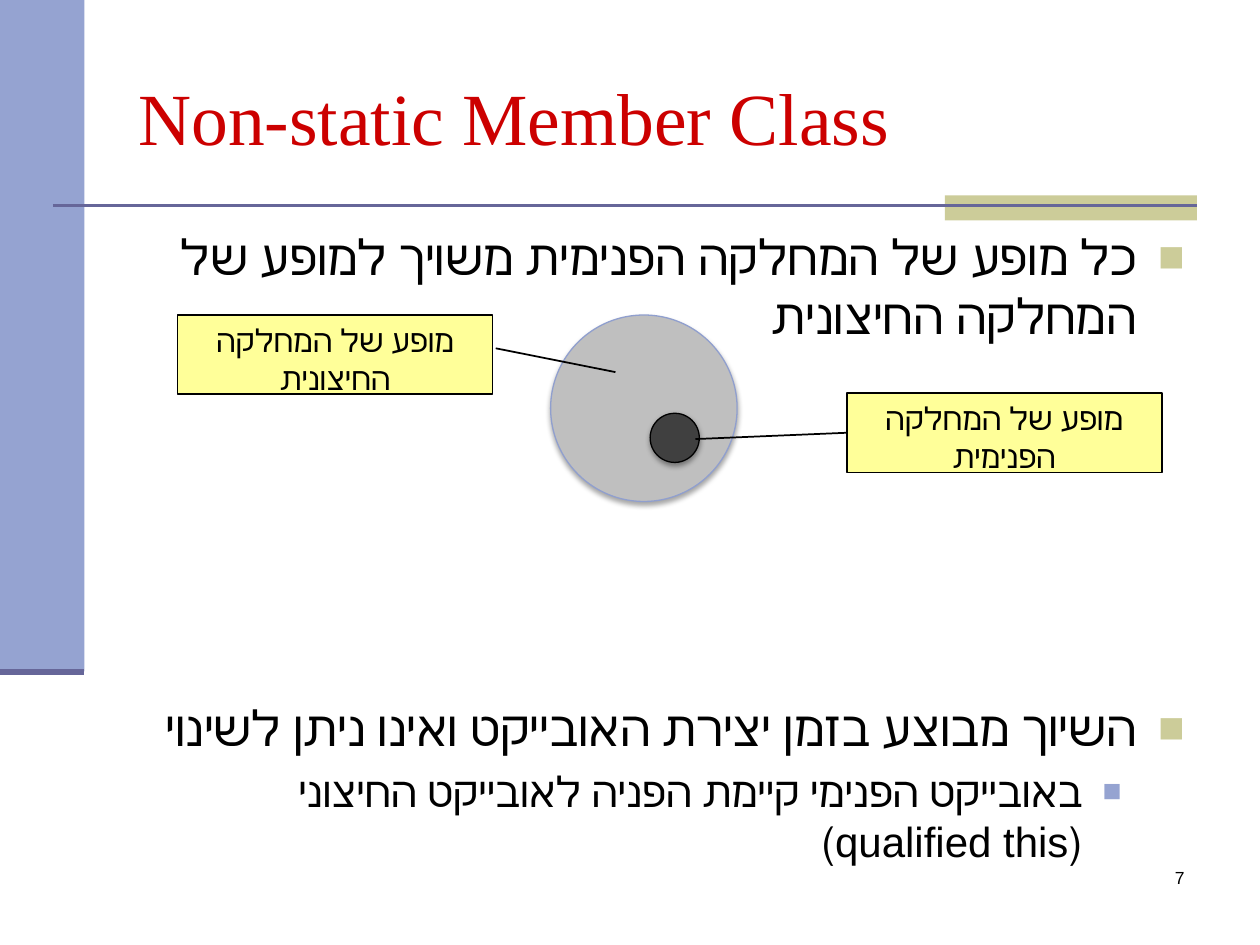
from lxml import etree
from pptx import Presentation
from pptx.dml.color import RGBColor
from pptx.enum.shapes import MSO_CONNECTOR, MSO_SHAPE
from pptx.enum.text import MSO_ANCHOR, PP_ALIGN
from pptx.oxml.ns import qn
from pptx.util import Inches, Pt

RECT = MSO_SHAPE.RECTANGLE
OVAL = MSO_SHAPE.OVAL
CALLOUT = MSO_SHAPE.LINE_CALLOUT_1
STRAIGHT = MSO_CONNECTOR.STRAIGHT
TOP, MIDDLE = MSO_ANCHOR.TOP, MSO_ANCHOR.MIDDLE
LEFT, CENTER, RIGHT = PP_ALIGN.LEFT, PP_ALIGN.CENTER, PP_ALIGN.RIGHT

BLACK = RGBColor(0x00, 0x00, 0x00)
RED = RGBColor(0xCC, 0x00, 0x00)
BLUE = RGBColor(0x95, 0xA3, 0xD1)
EDGE = RGBColor(0x90, 0x9F, 0xCE)
PURPLE = RGBColor(0x66, 0x66, 0x99)
OLIVE = RGBColor(0xCC, 0xCC, 0x99)
YELLOW = RGBColor(0xFF, 0xFF, 0x99)
SILVER = RGBColor(0xBF, 0xBF, 0xBF)
DARK = RGBColor(0x40, 0x40, 0x40)

LEVELS = [
    {"size": 28, "margin": 0.38, "hang": 0.38, "color": OLIVE, "scale": 90},
    {"size": 24, "margin": 0.81, "hang": 0.31, "color": BLUE, "scale": 75},
]


def add_node(parent, tag, **attrs):
    node = etree.SubElement(parent, qn(tag))
    for name, value in attrs.items():
        node.set(name, str(value))
    return node


def add_shape(slide, kind, box, fill, line=None, width=0.75):
    shape = slide.shapes.add_shape(kind, *map(Inches, box))
    shape.shadow.inherit = False
    shape.fill.solid()
    shape.fill.fore_color.rgb = fill
    if line is None:
        shape.line.fill.background()
    else:
        shape.line.color.rgb = line
        shape.line.width = Pt(width)
    return shape


def add_rule(slide, start, end, width):
    rule = slide.shapes.add_connector(STRAIGHT, *map(Inches, start + end))
    rule.line.color.rgb = PURPLE
    rule.line.width = Pt(width)
    add_node(rule._element.spPr, "a:effectLst")


def set_text(par, text, size, align, font="Arial", color=BLACK):
    par.text = text
    par.alignment = align
    par.font.name = font
    par.font.size = Pt(size)
    par.font.color.rgb = color


def add_frame(slide, box, anchor=TOP):
    frame = slide.shapes.add_textbox(*map(Inches, box)).text_frame
    frame.word_wrap = True
    frame.vertical_anchor = anchor
    return frame


def set_bullet(par, level):
    style = LEVELS[level]
    par.level = level
    par.space_before = Pt(style["size"] * 0.2)
    props = par._p.get_or_add_pPr()
    props.set("rtl", "1")
    props.set("marL", str(Inches(style["margin"])))
    props.set("marR", "0")
    props.set("indent", str(-Inches(style["hang"])))
    rest = props.find(qn("a:defRPr"))
    props.remove(rest)
    color = add_node(props, "a:buClr")
    add_node(color, "a:srgbClr", val=style["color"])
    add_node(props, "a:buSzPct", val=style["scale"] * 1000)
    add_node(props, "a:buFont", typeface="Arial")
    add_node(props, "a:buChar", char="■")
    props.append(rest)


def add_list(slide, box, items):
    frame = add_frame(slide, box)
    for index, (level, text) in enumerate(items):
        par = frame.add_paragraph() if index else frame.paragraphs[0]
        set_text(par, text, LEVELS[level]["size"], RIGHT)
        set_bullet(par, level)


def add_disc(slide, left, top, size, fill, line, alpha, drop):
    disc = add_shape(slide, OVAL, (left, top, size, size), fill, line)
    effects = disc._element.spPr.find(qn("a:effectLst"))
    shade = add_node(effects, "a:outerShdw", blurRad=Pt(3.1), dist=Pt(drop),
                     dir=90 * 60000, rotWithShape=0)
    color = add_node(shade, "a:srgbClr", val=BLACK)
    add_node(color, "a:alpha", val=alpha * 1000)


def add_callout(slide, left, top, text, points):
    note = add_shape(slide, CALLOUT, (left, top, 2.5, 0.63), YELLOW, BLACK, 1)
    for index, value in enumerate(points):
        note.adjustments[index] = value
    frame = note.text_frame
    frame.word_wrap = True
    frame.vertical_anchor = TOP
    par = frame.paragraphs[0]
    set_text(par, text, 18, CENTER)
    par._p.get_or_add_pPr().set("rtl", "1")


def add_decor(slide):
    add_shape(slide, RECT, (0, 0, 0.67, 5.33), BLUE)
    add_shape(slide, RECT, (7.5, 1.55, 2, 0.2), OLIVE)
    add_rule(slide, (0.42, 1.63), (9.5, 1.63), 1.5)
    add_rule(slide, (0, 5.33), (0.67, 5.33), 3.5)


def main():
    deck = Presentation()
    deck.slide_width, deck.slide_height = Inches(10), Inches(7.5)
    slide = deck.slides.add_slide(deck.slide_layouts[6])
    add_decor(slide)

    title = add_frame(slide, (1, 0.3, 8.5, 1.25), MIDDLE)
    set_text(title.paragraphs[0], "Non-static Member Class", 42, LEFT,
             "Times New Roman", RED)

    add_list(slide, (1, 1.75, 8.5, 1.1), [
        (0, "כל מופע של המחלקה הפנימית משויך למופע של המחלקה החיצונית"),
    ])
    add_list(slide, (1, 5.49, 8.5, 1.4), [
        (0, "השיוך מבוצע בזמן יצירת האובייקט ואינו ניתן לשינוי"),
        (1, "באובייקט הפנימי קיימת הפניה לאובייקט החיצוני (qualified this)"),
    ])

    add_disc(slide, 4.37, 2.5, 1.48, SILVER, EDGE, 35, 1.8)
    add_disc(slide, 5.16, 3.28, 0.39, DARK, BLACK, 38, 1.6)
    add_callout(slide, 6.72, 3.12, "מופע של המחלקה הפנימית",
                (0.5, 0, 0.58, -0.48))
    add_callout(slide, 1.41, 2.5, "מופע של המחלקה החיצונית",
                (0.42, 1.01, 0.72, 1.39))

    number = add_frame(slide, (7.42, 6.83, 2.08, 0.5))
    set_text(number.paragraphs[0], "7", 10, RIGHT)
    deck.save("out.pptx")


if __name__ == "__main__":
    main()
